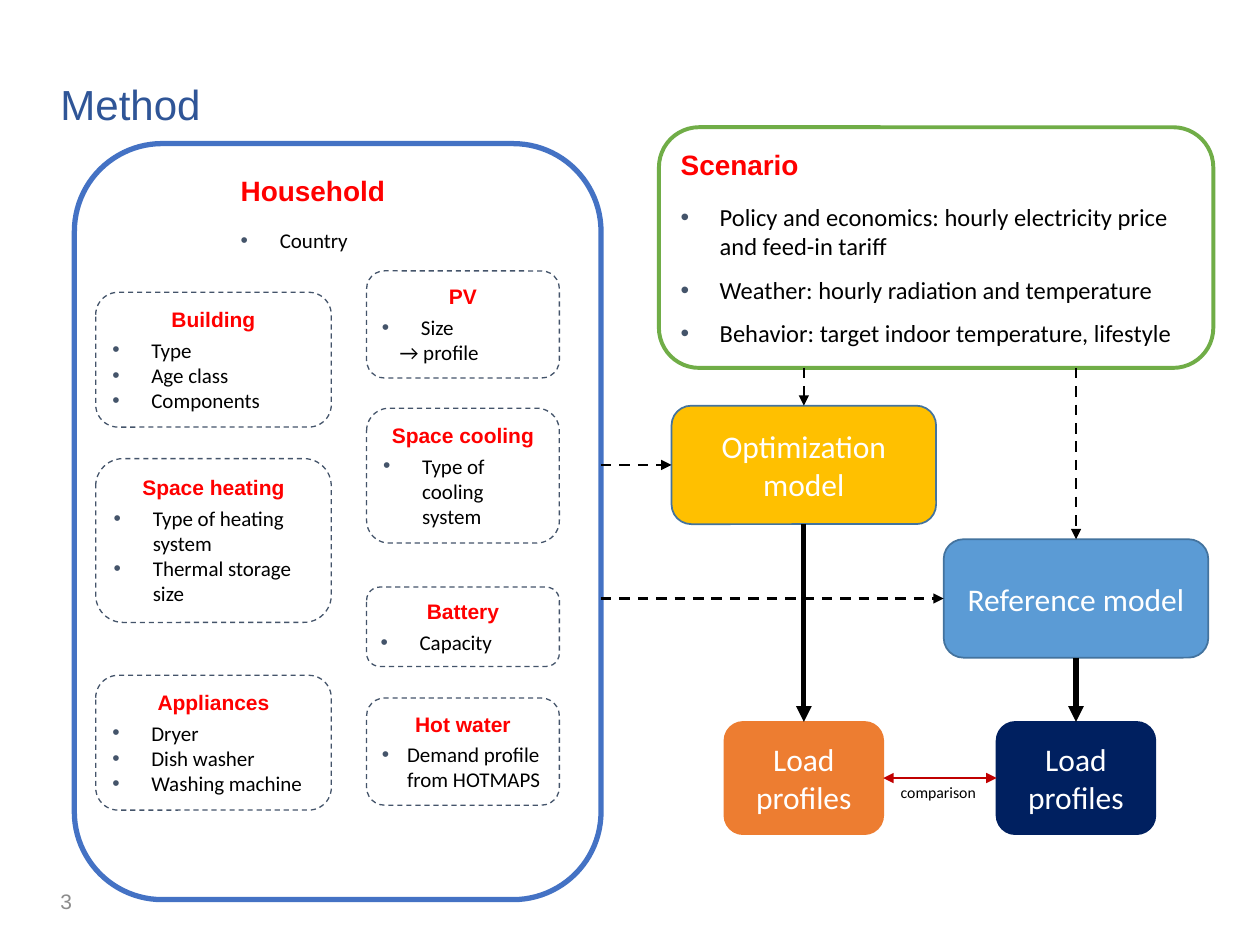
from lxml import etree
from pptx import Presentation
from pptx import util as u
from pptx.dml.color import RGBColor
from pptx.enum import dml, shapes, text
from pptx.oxml.ns import qn

Inches, Pt = u.Inches, u.Pt
COLORS = {
    "title": "2F5597", "number": "8C8C8C", "heading": "FF0000", "text": "000000",
    "slate": "44546A", "household": "4472C4", "scenario": "70AD47", "edge": "43739E",
    "optimization": "FFC000", "reference": "5B9BD5", "orange": "ED7D31",
    "navy": "002060", "compare": "C00000", "white": "FFFFFF",
}


def rgb(name):
    return RGBColor.from_string(COLORS[name])


def add_run(p, words, size, color, font="Calibri", bold=False):
    r = p.add_run()
    r.text = words
    r.font.size, r.font.name, r.font.bold = Pt(size), font, bold
    r.font.color.rgb = rgb(color)


def add_box(s, box, fill=None, line=None, width=1, dashed=False):
    sp = s.shapes.add_shape(shapes.MSO_SHAPE.ROUNDED_RECTANGLE, *map(Inches, box))
    sp.shadow.inherit = False
    if fill:
        sp.fill.solid()
        sp.fill.fore_color.rgb = rgb(fill)
    else:
        sp.fill.background()
    if line:
        sp.line.color.rgb = rgb(line)
        sp.line.width = Pt(width)
        if dashed:
            sp.line.dash_style = dml.MSO_LINE.DASH
    else:
        sp.line.fill.background()
    return sp


def indent(p, left, bullet=True):
    pPr = p._p.get_or_add_pPr()
    pPr.set("marL", str(Inches(left)))
    if bullet:
        pPr.set("indent", str(-Inches(left)))
        color = etree.SubElement(pPr, qn("a:buClr"))
        etree.SubElement(color, qn("a:srgbClr"), val=COLORS["slate"])
        etree.SubElement(pPr, qn("a:buFont"), typeface="Arial")
        etree.SubElement(pPr, qn("a:buChar"), char="•")


def write_list(sp, heading, items, sizes=(12, 12), gaps=(3, 0), centered=True, left=0.31):
    tf = sp.text_frame
    tf.word_wrap = True
    tf.vertical_anchor = text.MSO_ANCHOR.MIDDLE
    tf.margin_left = tf.margin_right = Inches(0.08)
    tf.margin_top = tf.margin_bottom = Inches(0.06)
    p = tf.paragraphs[0]
    p.alignment = text.PP_ALIGN.CENTER if centered else text.PP_ALIGN.LEFT
    p.space_after = Pt(gaps[0])
    add_run(p, heading, sizes[0], "heading", "Arial", True)
    for item in items:
        p = tf.add_paragraph()
        p.alignment = text.PP_ALIGN.LEFT
        p.space_after = Pt(gaps[1])
        bullet = not item.startswith("→")
        indent(p, left if bullet else 0.14, bullet)
        add_run(p, item, sizes[1], "text")


def add_arrow(s, start, end, color="text", width=1.5, dashed=False, both=False):
    c = s.shapes.add_connector(shapes.MSO_CONNECTOR.STRAIGHT, *map(Inches, (*start, *end)))
    c.line.color.rgb = rgb(color)
    c.line.width = Pt(width)
    if dashed:
        c.line.dash_style = dml.MSO_LINE.DASH
    ln = c.line._get_or_add_ln()
    for tag in ("a:headEnd", "a:tailEnd") if both else ("a:tailEnd",):
        etree.SubElement(ln, qn(tag), type="triangle")
    etree.SubElement(c._element.spPr, qn("a:effectLst"))


def add_label(s, box, words, size, color, font, wrap=True):
    tf = s.shapes.add_textbox(*map(Inches, box)).text_frame
    tf.word_wrap = wrap
    add_run(tf.paragraphs[0], words, size, color, font)
    return tf


def add_title(s, box):
    sp = s.shapes.title
    sp.left, sp.top, sp.width, sp.height = map(Inches, box)
    tf = sp.text_frame
    tf.vertical_anchor = text.MSO_ANCHOR.TOP
    p = tf.paragraphs[0]
    p.alignment = text.PP_ALIGN.LEFT
    p.line_spacing = 0.9
    add_run(p, "Method", 24, "title", "Arial")


def add_household(s, box):
    x, y, w, h = box
    add_box(s, box, line="household", width=3)
    label = add_box(s, (x + 1.2, y + 0.13, 2.5, 0.84))
    write_list(label, "Household", ["Country"], (16, 12), (12, 0), False)
    columns = [
        (0.17, 1.87, [
            (1.18, 1.07, "Building", ["Type", "Age class", "Components"]),
            (2.5, 1.3, "Space heating", ["Type of heating system", "Thermal storage size"]),
            (4.22, 1.07, "Appliances", ["Dryer", "Dish washer", "Washing machine"]),
        ]),
        (2.32, 1.53, [
            (1.01, 0.85, "PV", ["Size", "→ profile"]),
            (2.1, 1.07, "Space cooling", ["Type of cooling system"]),
            (3.52, 0.63, "Battery", ["Capacity"]),
            (4.4, 0.85, "Hot water", ["Demand profile from HOTMAPS"]),
        ]),
    ]
    for dx, width, cards in columns:
        for dy, height, heading, items in cards:
            sp = add_box(s, (x + dx, y + dy, width, height), line="slate", width=0.75, dashed=True)
            write_list(sp, heading, items, left=0.2 if heading == "Hot water" else 0.31)


def add_scenario(s, box):
    sp = add_box(s, box, line="scenario", width=2.25)
    write_list(sp, "Scenario", [
        "Policy and economics: hourly electricity price and feed-in tariff",
        "Weather: hourly radiation and temperature",
        "Behavior: target indoor temperature, lifestyle",
    ], (16, 14), (12, 8), False)


def add_models(s, box, household_right):
    x, y, w, h = box
    model_w, model_h, load_w, load_h = 2.1, 0.94, 1.26, 0.89
    load_top = y + h - load_h
    columns = [
        (x, 0.3, "Optimization model", "optimization", "orange"),
        (x + w - model_w, 1.36, "Reference model", "reference", "navy"),
    ]
    for left, dy, name, fill, load_fill in columns:
        mid, top = left + model_w / 2, y + dy
        load_left = mid - load_w / 2
        for place, words, color, edge in (
            ((left, top, model_w, model_h), name, fill, "edge"),
            ((load_left, load_top, load_w, load_h), "Load profiles", load_fill, load_fill),
        ):
            tf = add_box(s, place, color, edge).text_frame
            tf.word_wrap = True
            tf.vertical_anchor = text.MSO_ANCHOR.MIDDLE
            tf.paragraphs[0].alignment = text.PP_ALIGN.CENTER
            add_run(tf.paragraphs[0], words, 18, "white")
        middle = top + model_h / 2
        add_arrow(s, (mid, y), (mid, top), dashed=True)
        add_arrow(s, (household_right, middle), (left, middle), dashed=True)
        add_arrow(s, (mid, top + model_h), (mid, load_top), width=3)
    first, second = (c[0] + model_w / 2 for c in columns)
    level = load_top + load_h / 2
    add_arrow(s, (first + load_w / 2, level), (second - load_w / 2, level), "compare", both=True)
    add_label(s, (first + 0.67, level - 0.01, 0.81, 0.25), "comparison", 9, "text", "Calibri", False)


def main():
    prs = Presentation()
    prs.slide_width, prs.slide_height = Inches(10), Inches(7.5)
    s = prs.slides.add_slide(prs.slide_layouts[5])
    add_title(s, (0.38, 0.62, 9.24, 0.74))
    add_household(s, (0.59, 1.14, 4.18, 6))
    add_scenario(s, (5.23, 1.01, 4.4, 1.91))
    add_models(s, (5.33, 2.92, 4.26, 3.7), 4.77)
    number = add_label(s, (0.38, 6.95, 2.25, 0.4), "3", 12, "number", "Arial")
    number.vertical_anchor = text.MSO_ANCHOR.MIDDLE
    prs.save("out.pptx")


if __name__ == "__main__":
    main()
